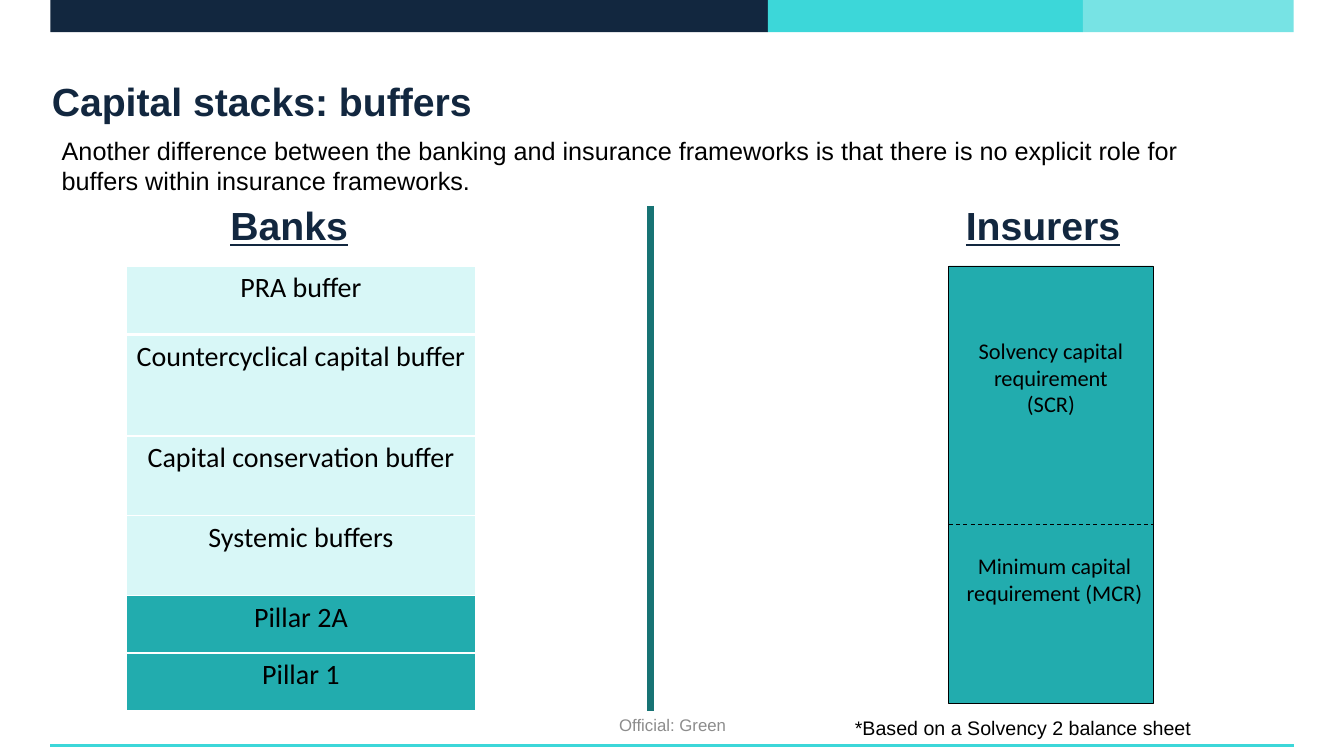
from lxml import etree
from pptx import Presentation, util as u
from pptx.dml.color import RGBColor
from pptx.enum import dml, shapes, text
from pptx.oxml.ns import qn

NAVY = RGBColor(0x12, 0x27, 0x3F)
CYAN = RGBColor(0x3C, 0xD7, 0xD9)
LIGHT_CYAN = RGBColor(0x77, 0xE3, 0xE4)
PALE_CYAN = RGBColor(0xD8, 0xF7, 0xF7)
TEAL = RGBColor(0x22, 0xAC, 0xAE)
DARK_TEAL = RGBColor(0x17, 0x73, 0x74)
GREY = RGBColor(0x8C, 0x8C, 0x8C)
BLACK = RGBColor(0, 0, 0)
WHITE = RGBColor(0xFF, 0xFF, 0xFF)

CENTER = text.PP_ALIGN.CENTER
LEFT = text.PP_ALIGN.LEFT
MIDDLE = text.MSO_ANCHOR.MIDDLE
TOP = text.MSO_ANCHOR.TOP

HEADING = {"name": "Arial", "size": u.Pt(28), "bold": True}
BODY = {"name": "Arial", "size": u.Pt(18)}
NOTE = {"name": "Arial", "size": u.Pt(14)}
FOOTER = {"name": "Arial", "size": u.Pt(12)}
LAYER = {"name": "Calibri", "size": u.Pt(20)}
LABEL = {"name": "Calibri", "size": u.Pt(16)}


class SlideBuilder:
    """Draws styled elements on one slide; all lengths are in points."""

    def __init__(self, slide):
        self.slide = slide

    def fill_frame(self, frame, words, style, color, align):
        frame.word_wrap = True
        paragraph = frame.paragraphs[0]
        paragraph.alignment = align
        run = paragraph.add_run()
        run.text = words
        for attribute, value in style.items():
            setattr(run.font, attribute, value)
        run.font.color.rgb = color

    def title(self, words, box):
        shape = self.slide.shapes.title
        shape.left, shape.top, shape.width, shape.height = map(u.Pt, box)
        frame = shape.text_frame
        frame.auto_size = text.MSO_AUTO_SIZE.NONE
        frame.vertical_anchor = MIDDLE
        for side in ("left", "top", "right", "bottom"):
            setattr(frame, f"margin_{side}", 0)
        self.fill_frame(frame, words, HEADING, NAVY, LEFT)

    def text(self, words, box, style, color=BLACK, align=LEFT, anchor=TOP):
        frame = self.slide.shapes.add_textbox(*map(u.Pt, box)).text_frame
        frame.vertical_anchor = anchor
        self.fill_frame(frame, words, style, color, align)

    def rectangle(self, box, fill, outline=None):
        shape = self.slide.shapes.add_shape(
            shapes.MSO_SHAPE.RECTANGLE, *map(u.Pt, box))
        shape.shadow.inherit = False
        shape.fill.solid()
        shape.fill.fore_color.rgb = fill
        if outline is None:
            shape.line.fill.background()
        else:
            shape.line.color.rgb = outline
            shape.line.width = u.Pt(0.63)

    def line(self, ends, color, width, dash=None):
        connector = self.slide.shapes.add_connector(
            shapes.MSO_CONNECTOR.STRAIGHT, *map(u.Pt, ends))
        connector.line.color.rgb = color
        connector.line.width = u.Pt(width)
        if dash is not None:
            connector.line.dash_style = dash
        etree.SubElement(connector._element.spPr, qn("a:effectLst"))

    def border(self, cell, side, width):
        properties = cell._tc.get_or_add_tcPr()
        edge = etree.SubElement(properties, qn(f"a:ln{side}"), w=str(u.Pt(width)))
        fill = etree.SubElement(edge, qn("a:solidFill"))
        etree.SubElement(fill, qn("a:srgbClr"), val=str(WHITE))

    def stack(self, left, top, width, layers):
        """One-column table; a layer is its words, height and fill."""
        total = sum(height for _, height, _ in layers)
        table = self.slide.shapes.add_table(
            len(layers), 1, *map(u.Pt, (left, top, width, total))).table
        table.first_row = table.horz_banding = False
        for index, (words, height, fill) in enumerate(layers):
            table.rows[index].height = u.Pt(height)
            cell = table.cell(index, 0)
            # The first layer is set off by a thicker rule below it
            thick = {"B": 3} if index == 0 else {"T": 3} if index == 1 else {}
            for side in "LRTB":
                self.border(cell, side, thick.get(side, 1))
            cell.fill.solid()
            cell.fill.fore_color.rgb = fill
            self.fill_frame(cell.text_frame, words, LAYER, BLACK, CENTER)


def main():
    presentation = Presentation()
    presentation.slide_width = u.Pt(960)
    presentation.slide_height = u.Pt(540)
    builder = SlideBuilder(
        presentation.slides.add_slide(presentation.slide_layouts[5]))

    # Top band and bottom rule
    left = 36
    for width, color in ((512.5, NAVY), (225, CYAN), (150.5, LIGHT_CYAN)):
        builder.rectangle((left, 0, width, 23), color)
        left += width
    builder.line((36, 532.8, 924, 532.8), CYAN, 2.25)

    # Title, introduction and footer
    builder.title("Capital stacks: buffers", (37, 36, 888, 72))
    builder.text("Another difference between the banking and insurance "
                 "frameworks is that there is no explicit role for buffers "
                 "within insurance frameworks.", (37, 93, 860, 51), BODY)
    builder.text("Official: Green", (240.5, 502.5, 480, 30), FOOTER, GREY,
                 CENTER, MIDDLE)

    # Column headings and divider
    for words, left in (("Banks", 26), ("Insurers", 564.5)):
        builder.text(words, (left, 140.5, 361, 41),
                     {**HEADING, "underline": True}, NAVY, CENTER)
    builder.line((465, 147, 465, 508), DARK_TEAL, 5)

    # Banks: capital layers
    builder.stack(90, 190, 250, [
        ("PRA buffer", 49, PALE_CYAN),
        ("Countercyclical capital buffer", 72.5, PALE_CYAN),
        ("Capital conservation buffer", 57, PALE_CYAN),
        ("Systemic buffers", 57, PALE_CYAN),
        ("Pillar 2A", 41, TEAL),
        ("Pillar 1", 41, TEAL),
    ])

    # Insurers: requirements
    builder.rectangle((677.8, 190, 145.8, 312.5), TEAL, BLACK)
    builder.line((677.8, 374.5, 823.6, 374.5), BLACK, 0.75,
                 dml.MSO_LINE.DASH)
    builder.text("Solvency capital requirement (SCR)",
                 (689.8, 237, 121.7, 68), LABEL, align=CENTER)
    builder.text("Minimum capital requirement (MCR)",
                 (677, 391, 152.5, 44), LABEL, align=CENTER)
    builder.text("*Based on a Solvency 2 balance sheet",
                 (603.5, 507.5, 356.5, 24.5), NOTE)

    presentation.save("out.pptx")


if __name__ == "__main__":
    main()
